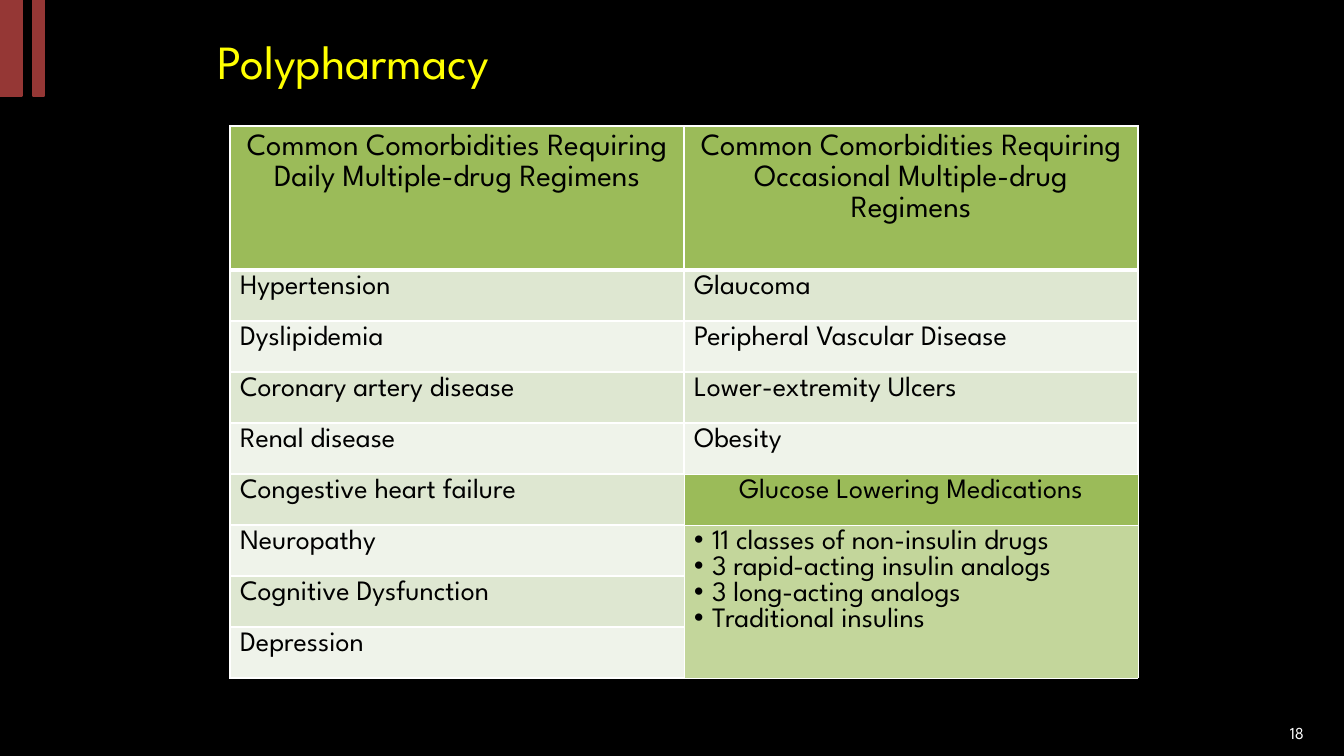
from dataclasses import dataclass

from pptx import Presentation
from pptx.dml.color import RGBColor
from pptx.enum import text as t
from pptx.oxml import parse_xml
from pptx.oxml.ns import nsdecls
from pptx.slide import Slide
from pptx.table import _Cell as Cell
from pptx.text.text import _Paragraph as Para
from pptx.util import Pt

FONT = "League Spartan"
BLACK = RGBColor(0x00, 0x00, 0x00)
WHITE = RGBColor(0xFF, 0xFF, 0xFF)
YELLOW = RGBColor(0xFF, 0xFF, 0x00)
RED = RGBColor(0x95, 0x37, 0x35)
GREEN = RGBColor(0x9B, 0xBB, 0x59)
LIME = RGBColor(0xC3, 0xD6, 0x9B)
SAGE = RGBColor(0xDE, 0xE7, 0xD1)
PALE = RGBColor(0xEF, 0xF3, 0xEA)

WIDE, HIGH = 1344, 756
SCALE = 12192000 / WIDE
HEAD, ROW, COL = 144, 51, 454


@dataclass(frozen=True)
class Bar:
    left: int
    width: int


@dataclass(frozen=True)
class Label:
    words: str
    box: tuple[int, int, int, int]
    size: int
    color: RGBColor
    anchor: t.MSO_ANCHOR
    wrap: bool


@dataclass(frozen=True)
class Entry:
    lines: tuple[str, ...]
    fill: RGBColor
    size: int = 20
    center: bool = False
    bullet: bool = False
    edges: tuple[float, float, float, float] = (1, 1, 1, 1)


BARS = [Bar(0, 22), Bar(33, 11)]
LABELS = [
    Label("Polypharmacy", (208, 21, 1008, 73), 34, YELLOW, t.MSO_ANCHOR.BOTTOM, True),
    Label("18", (1280, 718, 41, 30), 12, WHITE, t.MSO_ANCHOR.TOP, False),
]
TITLES = [
    "Common Comorbidities Requiring Daily Multiple-drug Regimens",
    "Common Comorbidities Requiring Occasional Multiple-drug Regimens",
]
DAILY = [
    "Hypertension", "Dyslipidemia", "Coronary artery disease", "Renal disease",
    "Congestive heart failure", "Neuropathy", "Cognitive Dysfunction", "Depression",
]
RARE = ["Glaucoma", "Peripheral Vascular Disease", "Lower-extremity Ulcers", "Obesity"]
MEDS = "Glucose Lowering Medications"
DRUGS = (
    "11 classes of non-insulin drugs",
    "3 rapid-acting insulin analogs",
    "3 long-acting analogs",
    "Traditional insulins",
)


def px(n: int) -> int:
    return round(n * SCALE)


def write(para: Para, words: str, size: int, color: RGBColor) -> None:
    run = para.add_run()
    run.text = words
    run.font.name = FONT
    run.font.size = Pt(size)
    run.font.color.rgb = color


def draw_bar(slide: Slide, bar: Bar) -> None:
    shape = slide.shapes.add_shape(1, px(bar.left), 0, px(bar.width), px(96))
    shape.shadow.inherit = False
    shape.fill.solid()
    shape.fill.fore_color.rgb = RED
    shape.line.color.rgb = RED
    shape.line.width = Pt(2)


def draw_label(slide: Slide, label: Label) -> None:
    frame = slide.shapes.add_textbox(*map(px, label.box)).text_frame
    frame.word_wrap = label.wrap
    frame.vertical_anchor = label.anchor
    write(frame.paragraphs[0], label.words, label.size, label.color)


def fill_cell(cell: Cell, entry: Entry) -> None:
    props = cell._tc.get_or_add_tcPr()
    for side, width in zip("LRTB", entry.edges):
        props.append(parse_xml(
            f'<a:ln{side} {nsdecls("a")} w="{Pt(width)}"><a:solidFill>'
            f'<a:srgbClr val="{WHITE}"/></a:solidFill></a:ln{side}>'))
    cell.fill.solid()
    cell.fill.fore_color.rgb = entry.fill
    frame = cell.text_frame
    for i, line in enumerate(entry.lines):
        para = frame.add_paragraph() if i else frame.paragraphs[0]
        if entry.center:
            para.alignment = t.PP_ALIGN.CENTER
        if entry.size == 22:
            para.line_spacing = 1.1
            para.space_before = para.space_after = Pt(5)
        if entry.bullet:
            rule = para._p.get_or_add_pPr()
            rule.set("marL", str(px(18)))
            rule.set("indent", str(-px(18)))
            rule.append(parse_xml(f'<a:buChar {nsdecls("a")} char="•"/>'))
        write(para, line, entry.size, BLACK)


def list_daily() -> list[Entry]:
    return [
        Entry((name,), PALE if i % 2 else SAGE,
              edges=(1, 1 if i < len(RARE) else 0.5, 1, 1))
        for i, name in enumerate(DAILY)
    ]


def list_rare() -> list[Entry]:
    thin = (0.5, 0.5, 0.5, 0.5)
    rare = [
        Entry((name,), PALE if i % 2 else SAGE,
              edges=(1, 1, 1, 0.5 if name == RARE[-1] else 1))
        for i, name in enumerate(RARE)
    ]
    rare.append(Entry((MEDS,), GREEN, center=True, edges=thin))
    rare.append(Entry(DRUGS, LIME, bullet=True, edges=thin))
    return rare + [Entry((), LIME, edges=thin)] * (len(DAILY) - len(rare))


def draw_table(slide: Slide) -> None:
    count = len(DAILY) + 1
    table = slide.shapes.add_table(
        count, 2, px(230), px(126), px(2 * COL), px(HEAD + ROW * len(DAILY))).table
    table.first_row = False
    table.horz_banding = False
    for col in table.columns:
        col.width = px(COL)
    for i, row in enumerate(table.rows):
        row.height = px(ROW if i else HEAD)
    table.cell(len(RARE) + 2, 1).merge(table.cell(count - 1, 1))
    for c, (title, body) in enumerate(zip(TITLES, (list_daily(), list_rare()))):
        head = Entry((title,), GREEN, size=22, center=True, edges=(1, 1, 1, 3))
        for r, entry in enumerate([head, *body]):
            fill_cell(table.cell(r, c), entry)


def main() -> None:
    deck = Presentation()
    deck.slide_width, deck.slide_height = px(WIDE), px(HIGH)
    slide = deck.slides.add_slide(deck.slide_layouts[6])
    slide.background.fill.solid()
    slide.background.fill.fore_color.rgb = BLACK
    for bar in BARS:
        draw_bar(slide, bar)
    for label in LABELS:
        draw_label(slide, label)
    draw_table(slide)
    deck.save("out.pptx")


if __name__ == "__main__":
    main()
